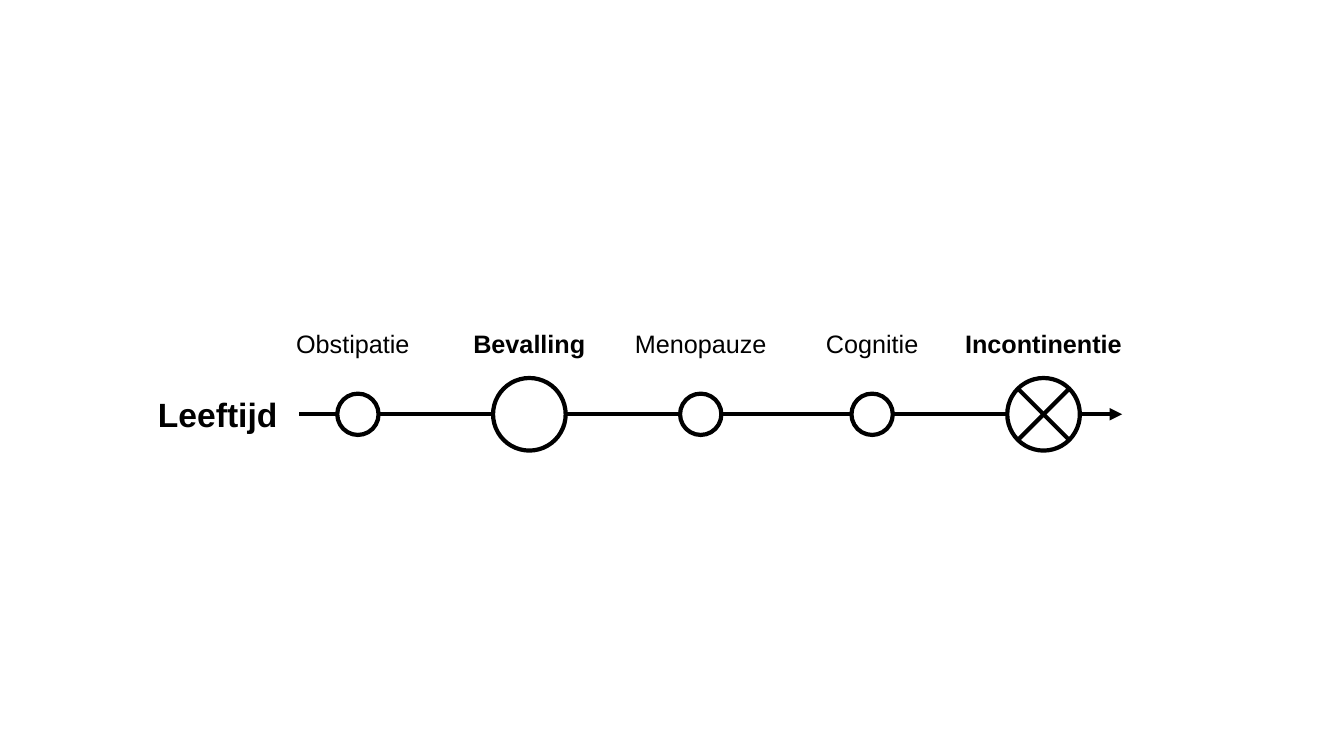
from pptx import Presentation
from pptx.dml.color import RGBColor
from pptx.enum.shapes import MSO_CONNECTOR, MSO_SHAPE
from pptx.enum.text import MSO_ANCHOR, MSO_AUTO_SIZE, PP_ALIGN
from pptx.oxml.ns import qn
from pptx.util import Inches, Pt
from lxml.etree import SubElement

AXIS_LABEL = "Leeftijd"
SMALL, LARGE = 0.41, 0.72
EVENTS = [
    {"name": "Obstipatie", "size": SMALL, "label_shift": -0.05},
    {"name": "Bevalling", "size": LARGE, "bold": True},
    {"name": "Menopauze", "size": SMALL},
    {"name": "Cognitie", "size": SMALL},
    {"name": "Incontinentie", "size": LARGE, "bold": True, "crossed": True},
]
COLOURS = {"ink": "000000", "paper": "FFFFFF"}
FONT = "Arial"
LINE_WIDTH = Pt(3)
AXIS_START, AXIS_END, AXIS_Y = 2.97, 11.13, 4.11
FIRST_X, STEP = 3.55, 1.7
LABEL_Y, LABEL_WIDTH, LABEL_HEIGHT = 3.41, 1.9, 0.4
CROSS_REACH = 0.255


def colour(name):
    return RGBColor.from_string(COLOURS[name])


def add_line(page, x1, y1, x2, y2, arrow=False):
    line = page.shapes.add_connector(
        MSO_CONNECTOR.STRAIGHT, Inches(x1), Inches(y1), Inches(x2), Inches(y2))
    line.line.color.rgb = colour("ink")
    line.line.width = LINE_WIDTH
    if arrow:
        SubElement(line.line._get_or_add_ln(), qn("a:tailEnd"), type="triangle")
    SubElement(line._element.spPr, qn("a:effectLst"))


def add_circle(page, x, y, size):
    circle = page.shapes.add_shape(
        MSO_SHAPE.OVAL, Inches(x - size / 2), Inches(y - size / 2),
        Inches(size), Inches(size))
    circle.shadow.inherit = False
    circle.fill.solid()
    circle.fill.fore_color.rgb = colour("paper")
    circle.line.color.rgb = colour("ink")
    circle.line.width = LINE_WIDTH


def add_label(page, text, x, y, width, height, size, bold):
    box = page.shapes.add_textbox(
        Inches(x - width / 2), Inches(y - height / 2), Inches(width), Inches(height))
    frame = box.text_frame
    frame.word_wrap = True
    frame.auto_size = MSO_AUTO_SIZE.SHAPE_TO_FIT_TEXT
    frame.vertical_anchor = MSO_ANCHOR.TOP
    frame.text = text
    para = frame.paragraphs[0]
    para.alignment = PP_ALIGN.CENTER
    font = para.runs[0].font
    font.name, font.size, font.bold = FONT, Pt(size), bold
    font.color.rgb = colour("ink")


def main():
    deck = Presentation()
    deck.slide_width, deck.slide_height = Inches(13.33), Inches(7.5)
    page = deck.slides.add_slide(deck.slide_layouts[6])

    add_line(page, AXIS_START, AXIS_Y, AXIS_END, AXIS_Y, arrow=True)
    add_label(page, AXIS_LABEL, 2.16, AXIS_Y, 1.6, 0.5, 24, True)

    for index, event in enumerate(EVENTS):
        x = FIRST_X + index * STEP
        add_circle(page, x, AXIS_Y, event["size"])
        add_label(page, event["name"], x + event.get("label_shift", 0), LABEL_Y,
                  LABEL_WIDTH, LABEL_HEIGHT, 18, event.get("bold", False))
        if event.get("crossed"):
            for reach in (CROSS_REACH, -CROSS_REACH):
                add_line(page, x - CROSS_REACH, AXIS_Y - reach,
                         x + CROSS_REACH, AXIS_Y + reach)

    deck.save("out.pptx")


if __name__ == "__main__":
    main()
